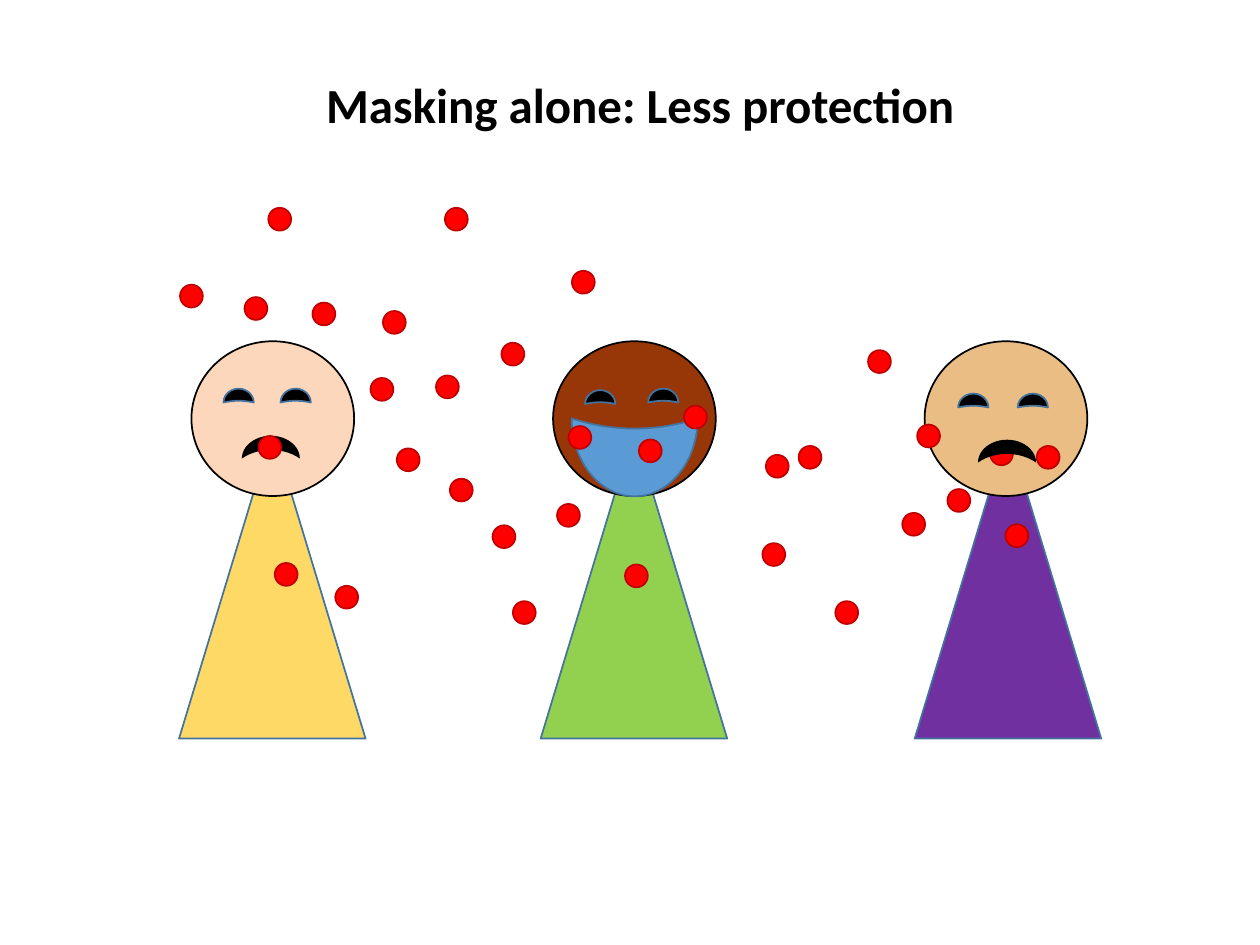
from pptx import Presentation
from pptx.dml.color import RGBColor
from pptx.enum.shapes import MSO_SHAPE
from pptx.enum.text import MSO_ANCHOR, PP_ALIGN
from pptx.util import Cm, Pt

TRIANGLE, OVAL, MOON = MSO_SHAPE.ISOSCELES_TRIANGLE, MSO_SHAPE.OVAL, MSO_SHAPE.MOON
CENTER, MIDDLE = PP_ALIGN.CENTER, MSO_ANCHOR.MIDDLE

BLACK = RGBColor(0x00, 0x00, 0x00)
OUTLINE = RGBColor(0x43, 0x73, 0x9E)
MASK_BLUE = RGBColor(0x5B, 0x9B, 0xD5)
DROPLET_RED = RGBColor(0xFF, 0x00, 0x00)
DROPLET_EDGE = RGBColor(0xC0, 0x00, 0x00)
YELLOW = RGBColor(0xFF, 0xD9, 0x66)
GREEN = RGBColor(0x92, 0xD0, 0x50)
PURPLE = RGBColor(0x70, 0x30, 0xA0)
PEACH = RGBColor(0xFC, 0xD7, 0xBC)
BROWN = RGBColor(0x97, 0x37, 0x07)
TAN = RGBColor(0xE9, 0xBD, 0x83)

TITLE = "Masking alone: Less protection"

PEOPLE = [
    {"body": (3.61, YELLOW), "head": (3.86, PEACH), "eyes": [(4.67, 7.67), (5.82, 7.67)]},
    {"body": (10.9, GREEN), "head": (11.15, BROWN), "eyes": [(11.96, 7.7), (13.23, 7.67)]},
    {"body": (18.44, PURPLE), "head": (18.64, TAN), "eyes": [(19.48, 7.77), (20.68, 7.77)]},
]
BODY_TOP, BODY_SIZE = 8.69, (3.76, 6.2)
HEAD_TOP, HEAD_SIZE = 6.88, (3.28, 3.12)
EYE_SIZE = (0.28, 0.61)
MASK, MASK_SIZE = (12.01, 7.95), (1.57, 2.54)
LEFT_MOUTH, RIGHT_MOUTH, MOUTH_SIZE = (5.23, 8.43), (20.07, 8.51), (0.46, 1.17)

DROPLET_SIZE = (0.46, 0.46)
DROPLETS = [
    (5.41, 4.19), (3.63, 5.74), (4.93, 5.99), (6.3, 6.1), (7.47, 7.62),
    (10.11, 6.91), (12.88, 8.86), (11.46, 8.59), (8.79, 7.57), (9.07, 9.65),
    (13.79, 8.18), (5.54, 11.35), (11.53, 5.46), (9.93, 10.59), (8.97, 4.19),
    (7.72, 6.27), (11.23, 10.16), (12.6, 11.38), (16.1, 8.99), (16.84, 12.12),
    (8.0, 9.04), (17.5, 7.06), (15.37, 10.95), (6.76, 11.81), (20.27, 10.57),
    (18.19, 10.34), (15.44, 9.17), (10.34, 12.12), (19.96, 8.92), (5.21, 8.79),
    (20.9, 8.99), (19.1, 9.86), (18.49, 8.56),
]


def add_part(slide, kind, corner, size, fill, line=None):
    part = slide.shapes.add_shape(kind, *(Cm(v) for v in (*corner, *size)))
    part.shadow.inherit = False
    part.fill.solid()
    part.fill.fore_color.rgb = fill
    if line is None:
        part.line.fill.background()
    else:
        part.line.color.rgb = line
        part.line.width = Pt(1)
    return part


def add_moon(slide, corner, size, rotation, depth, fill, line=None):
    moon = add_part(slide, MOON, corner, size, fill, line)
    moon.rotation = rotation
    moon.adjustments[0] = depth


def add_mouth(slide, corner):
    add_moon(slide, corner, MOUTH_SIZE, 90, 0.619, BLACK)


def add_title(slide):
    title = slide.shapes.title
    title.left, title.top, title.width, title.height = Cm(0.41), Cm(0.33), Cm(24.99), Cm(3.68)
    title.text_frame.text = TITLE
    title.text_frame.vertical_anchor = MIDDLE
    heading = title.text_frame.paragraphs[0]
    heading.alignment = CENTER
    heading.line_spacing = 0.9
    heading.font.name = "Calibri"
    heading.font.size = Pt(28)
    heading.font.bold = True
    heading.font.color.rgb = BLACK


def main():
    deck = Presentation()
    deck.slide_width, deck.slide_height = Cm(25.4), Cm(19.05)
    slide = deck.slides.add_slide(deck.slide_layouts[5])
    add_title(slide)

    for person in PEOPLE:
        body_left, clothing = person["body"]
        head_left, skin = person["head"]
        add_part(slide, TRIANGLE, (body_left, BODY_TOP), BODY_SIZE, clothing, OUTLINE)
        add_part(slide, OVAL, (head_left, HEAD_TOP), HEAD_SIZE, skin, BLACK)
        for eye in person["eyes"]:
            add_moon(slide, eye, EYE_SIZE, 90, 0.875, BLACK, OUTLINE)

    add_moon(slide, MASK, MASK_SIZE, 270, 0.87, MASK_BLUE, OUTLINE)
    add_mouth(slide, LEFT_MOUTH)
    for droplet in DROPLETS:
        add_part(slide, OVAL, droplet, DROPLET_SIZE, DROPLET_RED, DROPLET_EDGE)
    add_mouth(slide, RIGHT_MOUTH)

    deck.save("out.pptx")


if __name__ == "__main__":
    main()
